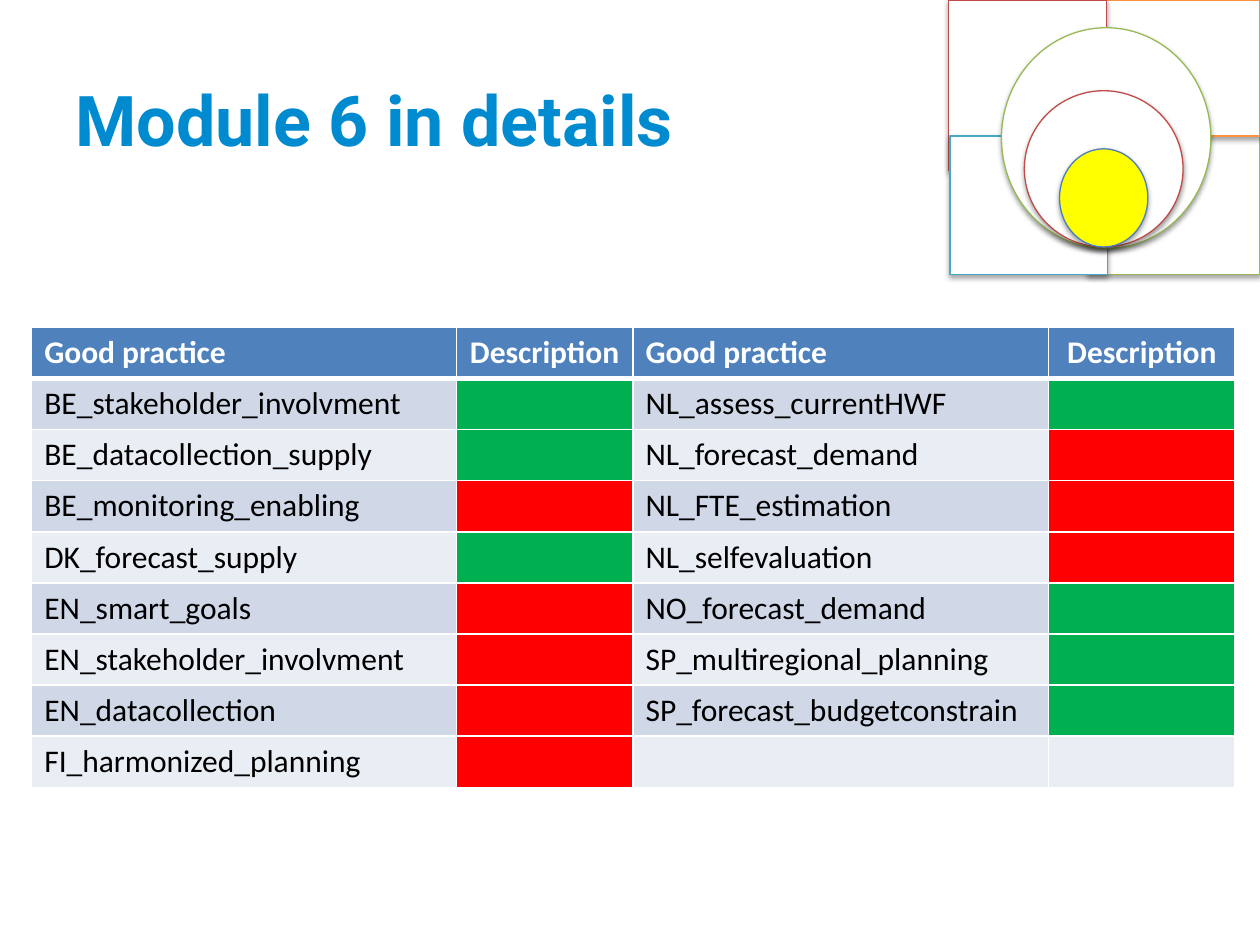
import pptx
import pptx.util
import pptx.dml.color
import pptx.enum.shapes
import pptx.enum.text
import pptx.oxml
import pptx.oxml.ns

Cm = pptx.util.Cm
Pt = pptx.util.Pt
MSO = pptx.enum.shapes.MSO_SHAPE
ALIGN = pptx.enum.text.PP_ALIGN

THEME = {
    "title": ("Roboto", 40, "008ACF", True),
    "head": ("Calibri", 18, "FFFFFF", True),
    "body": ("Calibri", 18, "000000", False),
    "top": "4F81BD",
    "bands": ("D0D8E8", "E9EDF4"),
    "yes": "00B050",
    "no": "FF0000",
    "white": "FFFFFF",
    "yellow": "FFFF00",
    "green": "98B955",
    "orange": "F69240",
    "red": "BF4C48",
    "teal": "46AAC5",
    "blue": "4B7EBC",
}

TITLE = "Module 6 in details"
HEAD = ("Good practice", "Description") * 2
LEFT = [
    ("BE_stakeholder_involvment", "yes"),
    ("BE_datacollection_supply", "yes"),
    ("BE_monitoring_enabling", "no"),
    ("DK_forecast_supply", "yes"),
    ("EN_smart_goals", "no"),
    ("EN_stakeholder_involvment", "no"),
    ("EN_datacollection", "no"),
    ("FI_harmonized_planning", "no"),
]
RIGHT = [
    ("NL_assess_currentHWF", "yes"),
    ("NL_forecast_demand", "no"),
    ("NL_FTE_estimation", "no"),
    ("NL_selfevaluation", "no"),
    ("NO_forecast_demand", "yes"),
    ("SP_multiregional_planning", "yes"),
    ("SP_forecast_budgetconstrain", "yes"),
    ("", None),
]
WIDTHS = (8.56, 3.56, 8.38, 3.76)
ROW = 1.03

SOFT = (35, 1.8)
HARD = (38, 1.6)
CORNERS = [
    ((21.92, 2.06, 3.48, 3.48), 270, 0.5, "green", SOFT),
    ((22.3, 0, 3.1, 2.74), 180, 0.7, "orange", SOFT),
    ((19, 0.13, 3.43, 3.18), 90, 0.5, "red", HARD),
    ((19.15, 2.74, 3.18, 2.79), 0, 0.73, "teal", SOFT),
]
RINGS = [
    ((20.19, 0.56, 4.22, 4.45), "white", "green"),
    ((20.65, 1.83, 3.2, 3.15), "white", "red"),
    ((21.36, 3, 1.78, 1.98), "yellow", "blue"),
]


def tint(code):
    return pptx.dml.color.RGBColor.from_string(code)


def paint(fill, code):
    fill.solid()
    fill.fore_color.rgb = tint(code)


def style(para, kind):
    name, size, code, bold = THEME[kind]
    for run in para.runs:
        font = run.font
        font.name, font.size, font.bold = name, Pt(size), bold
        font.color.rgb = tint(code)


def build(text):
    return pptx.oxml.parse_xml(text.replace(
        " ", " " + pptx.oxml.ns.nsdecls("a") + " ", 1))


def draw(group, kind, box, fill, line, shade):
    shape = group.shapes.add_shape(kind, *map(Cm, box))
    paint(shape.fill, THEME[fill])
    shape.line.color.rgb = tint(THEME[line])
    shape.line.width = Pt(0.75)
    shape.shadow.inherit = False
    alpha, dist = shade
    glow = shape._element.spPr.find(pptx.oxml.ns.qn("a:effectLst"))
    glow.append(build(
        f'<a:outerShdw blurRad="{Pt(3.1)}" dist="{Pt(dist)}" dir="5400000" '
        f'rotWithShape="0"><a:srgbClr val="000000"><a:alpha val="{alpha * 1000}"/>'
        '</a:srgbClr></a:outerShdw>'))
    return shape


def edge(cell, sides):
    props = cell._tc.get_or_add_tcPr()
    for spot, (side, width) in enumerate(sides.items()):
        props.insert(spot, build(
            f'<a:ln{side} w="{Pt(width)}"><a:solidFill><a:srgbClr '
            f'val="{THEME["white"]}"/></a:solidFill></a:ln{side}>'))


def add_title(slide):
    title = slide.shapes.title
    title.left, title.top, title.width, title.height = map(
        Cm, (1.27, 1.42, 22.86, 3.18))
    frame = title.text_frame
    frame.text = TITLE
    frame.word_wrap = True
    frame.auto_size = pptx.enum.text.MSO_AUTO_SIZE.NONE
    frame.vertical_anchor = pptx.enum.text.MSO_ANCHOR.TOP
    frame.paragraphs[0].alignment = ALIGN.LEFT
    style(frame.paragraphs[0], "title")


def add_badge(slide):
    group = slide.shapes.add_group_shape()
    for box, turn, arm, line, shade in CORNERS:
        shape = draw(group, MSO.CORNER, box, "white", line, shade)
        shape.rotation = turn
        shape.adjustments[0] = 0.5
        shape.adjustments[1] = arm
    for box, fill, line in RINGS:
        draw(group, MSO.OVAL, box, fill, line, HARD)


def add_grid(slide):
    rows = [HEAD] + [a + b for a, b in zip(LEFT, RIGHT)]
    table = slide.shapes.add_table(
        len(rows), len(WIDTHS), Cm(0.64), Cm(6.6),
        Cm(sum(WIDTHS)), Cm(ROW * len(rows))).table
    for col, width in zip(table.columns, WIDTHS):
        col.width = Cm(width)
    for r, row in enumerate(rows):
        table.rows[r].height = Cm(ROW)
        band = THEME["bands"][(r - 1) % 2] if r else THEME["top"]
        for c, value in enumerate(row):
            cell = table.cell(r, c)
            mark = r > 0 and c % 2 == 1
            paint(cell.fill, THEME[value] if mark and value else band)
            edge(cell, {"L": 1, "R": 1, "T": 3 if r == 1 else 1,
                        "B": 1 if r else 3})
            if not mark:
                cell.text_frame.text = value
                para = cell.text_frame.paragraphs[0]
                para.alignment = ALIGN.CENTER if c % 2 else ALIGN.LEFT
                style(para, "body" if r else "head")


def main():
    deck = pptx.Presentation()
    deck.slide_width, deck.slide_height = Cm(25.4), Cm(19.05)
    slide = deck.slides.add_slide(deck.slide_layouts[5])
    add_title(slide)
    add_badge(slide)
    add_grid(slide)
    deck.save("out.pptx")


if __name__ == "__main__":
    main()
